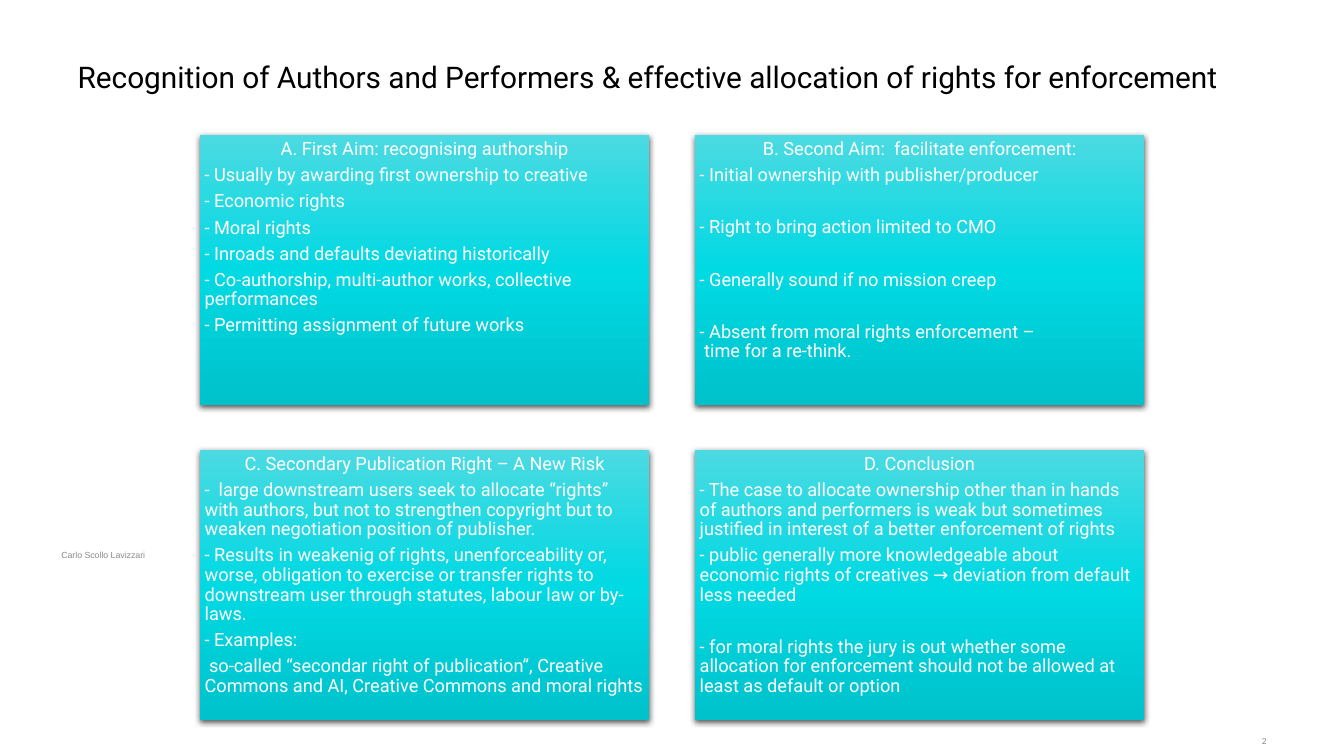
from dataclasses import dataclass

from pptx import Presentation
from pptx.dml.color import RGBColor as RGB
from pptx.enum.shapes import MSO_SHAPE as SHAPE
from pptx.enum.text import MSO_ANCHOR as ANCHOR, PP_ALIGN as ALIGN
from pptx.oxml import parse_xml
from pptx.oxml.ns import nsdecls
from pptx.util import Inches, Pt


@dataclass(frozen=True)
class Theme:
    font: str = "Roboto"
    ink: str = "000000"
    muted: str = "8C8C8C"
    card_text: str = "FFFFFF"
    gradient: tuple = ((0, "4BDAE2"), (50, "01D9E3"), (100, "00C2CB"))
    title_size: float = 21.3
    card_size: float = 13
    number_size: float = 6.7
    author_size: float = 6.3
    card_after: float = 4.55
    card_gap: float = 18.6


T = Theme()

# Card grid: first corner, card size and step to the next column and row
LEFT, TOP, CARD_W, CARD_H = 1.98, 1.34, 4.46, 2.68
STEP_X, STEP_Y = 4.91, 3.12

GAP = None  # marks a skipped line before the next point

CARDS = [
    ("A. First Aim: recognising authorship", [
        "- Usually by awarding first ownership to creative",
        "- Economic rights",
        "- Moral rights",
        "- Inroads and defaults deviating historically",
        "- Co-authorship, multi-author works, collective performances",
        "- Permitting assignment of future works",
    ]),
    ("B. Second Aim:  facilitate enforcement:", [
        "- Initial ownership with publisher/producer",
        GAP,
        "- Right to bring action limited to CMO",
        GAP,
        "- Generally sound if no mission creep",
        GAP,
        "- Absent from moral rights enforcement –\v time for a re-think.",
    ]),
    ("C. Secondary Publication Right – A New Risk", [
        "-  large downstream users seek to allocate “rights” with authors, but not to "
        "strengthen copyright but to weaken negotiation position of publisher.",
        "- Results in weakenig of rights, unenforceability or, worse, obligation to "
        "exercise or transfer rights to downstream user through statutes, labour law "
        "or by-laws.",
        "- Examples:",
        " so-called “secondar right of publication”, Creative Commons and AI, "
        "Creative Commons and moral rights",
    ]),
    ("D. Conclusion", [
        "- The case to allocate ownership other than in hands of authors and performers "
        "is weak but sometimes justified in interest of a better enforcement of rights",
        "- public generally more knowledgeable about\veconomic rights of creatives → "
        "deviation from default less needed",
        GAP,
        "- for moral rights the jury is out whether some allocation for enforcement "
        "should not be allowed at least as default or option",
    ]),
]


def set_all(obj, values):
    for name, value in values.items():
        setattr(obj, name, value)


def box(left, top, width, height):
    return [Inches(v) for v in (left, top, width, height)]


def write(p, text, size, color, font=T.font, **layout):
    """Fill one paragraph and format it."""
    p.text = text
    set_all(p, {"line_spacing": 0.9, "alignment": ALIGN.LEFT, **layout})
    for r in p.runs:
        set_all(r.font, {"name": font, "size": Pt(size)})
        r.font.color.rgb = RGB.from_string(color)


def add_title(s, text):
    sp = s.shapes.title
    set_all(sp, dict(zip(("left", "top", "width", "height"), box(0.67, 0.55, 12, 0.47))))
    set_all(sp.text_frame, {"vertical_anchor": ANCHOR.MIDDLE, "word_wrap": True})
    write(sp.text_frame.paragraphs[0], text, T.title_size, T.ink)


def add_label(s, text, place, size, font, **layout):
    tf = s.shapes.add_textbox(*box(*place)).text_frame
    set_all(tf, {"vertical_anchor": ANCHOR.MIDDLE, "word_wrap": True})
    write(tf.paragraphs[0], text, size, T.muted, font, space_after=Pt(8), **layout)


def paint_card(sp):
    """Vertical gradient, no outline, soft shadow below."""
    stops = "".join(f'<a:gs pos="{pos * 1000}"><a:srgbClr val="{color}"/></a:gs>'
                    for pos, color in T.gradient)
    props = sp._element.spPr
    props.append(parse_xml(f'<a:gradFill {nsdecls("a")} rotWithShape="1"><a:gsLst>{stops}'
                           '</a:gsLst><a:lin ang="5400000" scaled="0"/></a:gradFill>'))
    sp.line.fill.background()
    props.append(parse_xml(
        f'<a:effectLst {nsdecls("a")}><a:outerShdw blurRad="{Pt(4.5)}" dist="{Pt(1.5)}" '
        'dir="5400000" algn="ctr" rotWithShape="0"><a:srgbClr val="000000">'
        '<a:alpha val="63000"/></a:srgbClr></a:outerShdw></a:effectLst>'))


def add_card(s, col, row, heading, points):
    place = box(LEFT + col * STEP_X, TOP + row * STEP_Y, CARD_W, CARD_H)
    sp = s.shapes.add_shape(SHAPE.RECTANGLE, *place)
    paint_card(sp)
    tf = sp.text_frame
    set_all(tf, {"vertical_anchor": ANCHOR.TOP, "word_wrap": True})
    set_all(tf, {f"margin_{side}": Inches(0.05)
                 for side in ("left", "top", "right", "bottom")})
    style = {"size": T.card_size, "color": T.card_text, "space_after": Pt(T.card_after)}
    write(tf.paragraphs[0], heading, alignment=ALIGN.CENTER, **style)
    before = 0
    for point in points:
        if point is GAP:
            before = T.card_gap
            continue
        write(tf.add_paragraph(), point, space_before=Pt(before), **style)
        before = 0


def main():
    prs = Presentation()
    set_all(prs, {"slide_width": Inches(13.33), "slide_height": Inches(7.5)})
    s = prs.slides.add_slide(prs.slide_layouts[5])

    # Title
    add_title(s, "Recognition of Authors and Performers & effective allocation "
                 "of rights for enforcement")

    # Slide number and author
    add_label(s, "2", (11.39, 7.24, 1.27, 0.24), T.number_size, "Calibri",
              alignment=ALIGN.RIGHT)
    add_label(s, "Carlo Scollo Lavizzari", (0.51, 5.43, 3.17, 0.18), T.author_size,
              "Arial", line_spacing=0.7)

    # Two by two cards
    for i, (heading, points) in enumerate(CARDS):
        row, col = divmod(i, 2)
        add_card(s, col, row, heading, points)

    prs.save("out.pptx")


if __name__ == "__main__":
    main()
